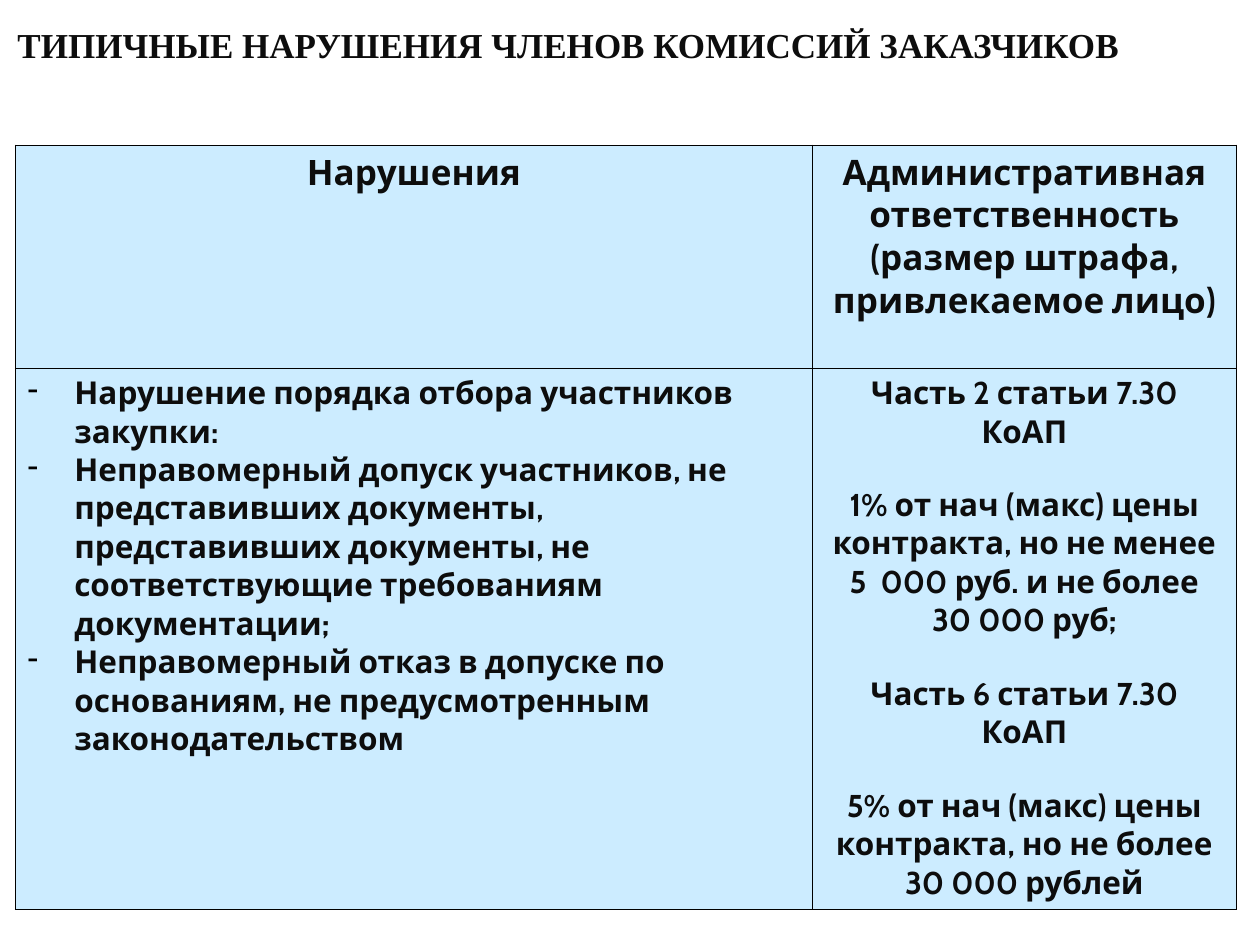
from dataclasses import dataclass

from lxml import etree
from pptx import Presentation
from pptx.dml.color import RGBColor
from pptx.enum.text import MSO_ANCHOR, PP_ALIGN
from pptx.oxml.ns import qn
from pptx.util import Inches, Pt


@dataclass(frozen=True)
class Theme:
    text: str = "0D0D0D"
    line: str = "000000"
    cell: str = "CCECFF"
    title_font: str = "Times New Roman"
    table_font: str = "Cabin"
    heading_size: int = 20
    body_size: int = 18
    gap: int = 20
    border: float = 0.45
    indent: float = 0.37


theme = Theme()


def format_text(paragraph, font_name, size):
    for run in paragraph.runs:
        run.font.name = font_name
        run.font.size = Pt(size)
        run.font.bold = True
        run.font.color.rgb = RGBColor.from_string(theme.text)


def add_dash(paragraph):
    properties = paragraph._p.get_or_add_pPr()
    properties.set("marL", str(Inches(theme.indent)))
    properties.set("indent", str(-Inches(theme.indent)))
    color = etree.SubElement(properties, qn("a:buClr"))
    etree.SubElement(color, qn("a:srgbClr"), val=theme.line)
    etree.SubElement(properties, qn("a:buChar"), char="-")


presentation = Presentation()
presentation.slide_width = Inches(10)
presentation.slide_height = Inches(7.5)
slide = presentation.slides.add_slide(presentation.slide_layouts[6])

# Title
title = slide.shapes.add_textbox(Inches(0.04), Inches(0.13), Inches(9.77), Inches(0.45))
title_frame = title.text_frame
title_frame.word_wrap = False
title_frame.vertical_anchor = MSO_ANCHOR.MIDDLE
title_frame.text = "ТИПИЧНЫЕ НАРУШЕНИЯ ЧЛЕНОВ КОМИССИЙ ЗАКАЗЧИКОВ"
format_text(title_frame.paragraphs[0], theme.title_font, theme.heading_size)

# Table content: headings, then violations beside their penalties
rows = [
    [
        ["Нарушения"],
        ["Административная ответственность (размер штрафа, привлекаемое лицо)"],
    ],
    [
        [
            "Нарушение порядка отбора участников закупки:",
            "Неправомерный допуск участников, не представивших документы, "
            "представивших документы, не соответствующие требованиям документации;",
            "Неправомерный отказ в допуске по основаниям, "
            "не предусмотренным законодательством",
        ],
        [
            "Часть 2 статьи 7.30 КоАП",
            "1% от нач (макс) цены контракта, но не менее 5  000 руб. и не более",
            "30 000 руб;",
            "Часть 6 статьи 7.30 КоАП",
            "5% от нач (макс) цены контракта, но не более 30 000 рублей",
        ],
    ],
]
spaced_penalties = {1, 3, 4}  # penalty paragraphs set apart from the one above
column_widths = [6.33, 3.36]
row_heights = [1.77, 4.3]

# Table grid
table = slide.shapes.add_table(
    len(rows), len(column_widths), Inches(0.12), Inches(1.15),
    Inches(sum(column_widths)), Inches(sum(row_heights)),
).table
table.first_row = False
table.horz_banding = False
for column, width in zip(table.columns, column_widths):
    column.width = Inches(width)
for row, height in zip(table.rows, row_heights):
    row.height = Inches(height)

# Table cells
for row_index, row_texts in enumerate(rows):
    is_heading = row_index == 0
    for column_index, texts in enumerate(row_texts):
        cell = table.cell(row_index, column_index)
        is_violation = not is_heading and column_index == 0
        is_penalty = not is_heading and column_index == 1

        cell_properties = cell._tc.get_or_add_tcPr()
        for side in ("lnL", "lnR", "lnT", "lnB"):
            border = etree.SubElement(
                cell_properties, qn(f"a:{side}"), w=str(Pt(theme.border)))
            border_fill = etree.SubElement(border, qn("a:solidFill"))
            etree.SubElement(border_fill, qn("a:srgbClr"), val=theme.line)
        cell.fill.solid()
        cell.fill.fore_color.rgb = RGBColor.from_string(theme.cell)

        cell.text_frame.text = "\n".join(texts)
        for index, paragraph in enumerate(cell.text_frame.paragraphs):
            if is_violation:
                add_dash(paragraph)
            else:
                paragraph.alignment = PP_ALIGN.CENTER
            if is_penalty and index in spaced_penalties:
                paragraph.space_before = Pt(theme.gap)
            size = theme.heading_size if is_heading else theme.body_size
            format_text(paragraph, theme.table_font, size)

presentation.save("out.pptx")
